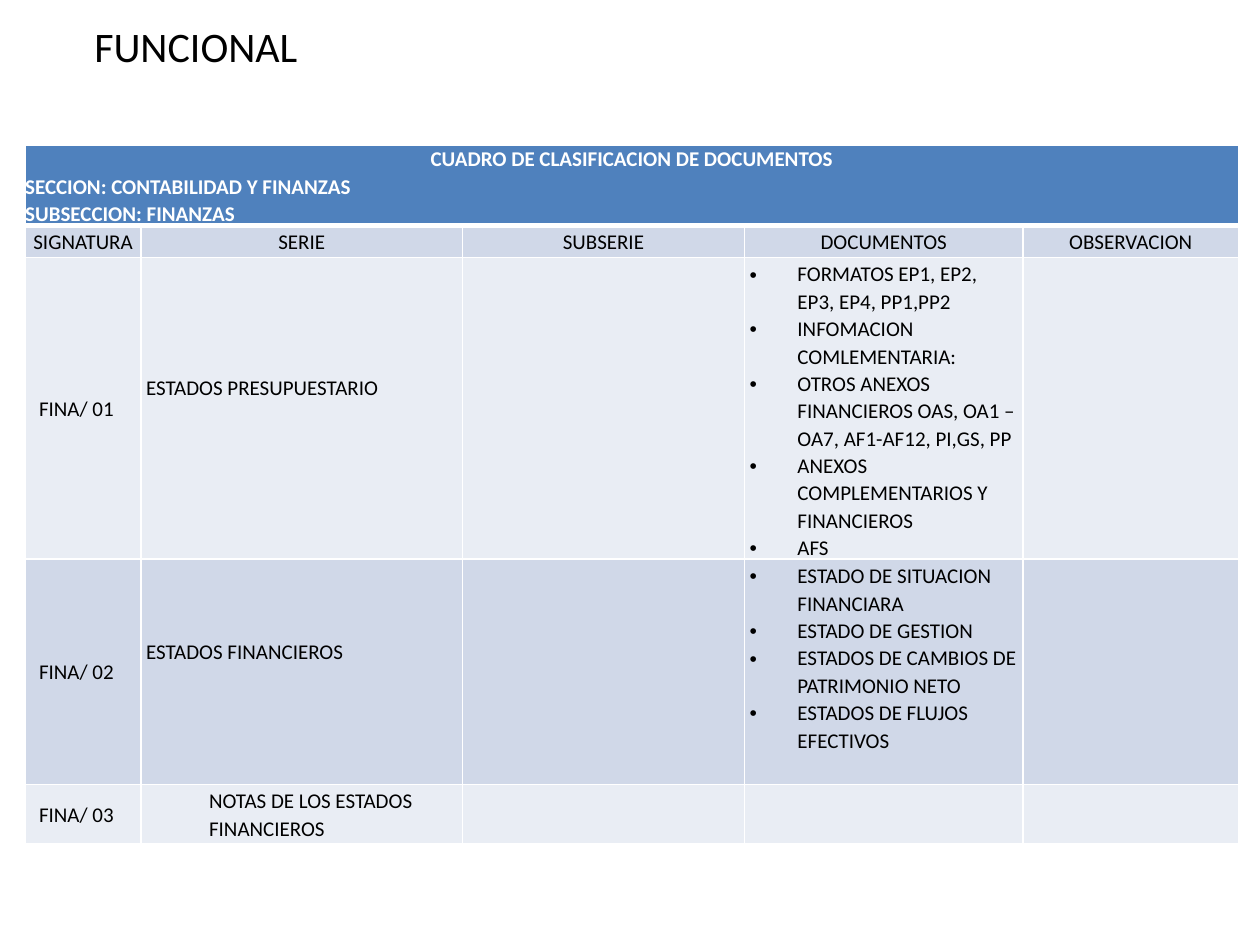
from lxml.etree import SubElement as Sub
from pptx import Presentation
from pptx.dml.color import RGBColor as RGB
from pptx.enum.text import MSO_ANCHOR as Anchor, PP_ALIGN as Align
from pptx.oxml.ns import qn
from pptx.util import Inches, Pt

WHITE = RGB(0xFF, 0xFF, 0xFF)
BLACK = RGB(0, 0, 0)
BLUE = RGB(0x4F, 0x81, 0xBD)
BAND = RGB(0xD0, 0xD8, 0xE8)
PALE = RGB(0xE9, 0xED, 0xF4)

COLS = [0.92, 2.55, 2.24, 2.21, 1.71]
ROWS = [0.54, 0.21, 2.19, 1.79, 0.46]
SIDES = ("lnL", "lnR", "lnT", "lnB")

HEAD = [
    "CUADRO DE CLASIFICACION DE DOCUMENTOS",
    "SECCION: CONTABILIDAD Y FINANZAS",
    "SUBSECCION: FINANZAS",
]
NAMES = ["SIGNATURA", "SERIE", "SUBSERIE", "DOCUMENTOS", "OBSERVACION"]
# Code, series, series format, documents, room below the documents
ITEMS = [
    ("FINA/ 01", "ESTADOS PRESUPUESTARIO", {"foot": 0.35}, [
        "FORMATOS EP1, EP2, EP3, EP4, PP1,PP2",
        "INFOMACION COMLEMENTARIA:",
        "OTROS ANEXOS FINANCIEROS OAS, OA1 –OA7, AF1-AF12, PI,GS, PP",
        "ANEXOS COMPLEMENTARIOS Y FINANCIEROS",
        "AFS",
    ], 0.02),
    ("FINA/ 02", "ESTADOS FINANCIEROS", {"foot": 0.35}, [
        "ESTADO DE SITUACION FINANCIARA",
        "ESTADO DE GESTION",
        "ESTADOS DE CAMBIOS DE PATRIMONIO NETO",
        "ESTADOS DE FLUJOS EFECTIVOS",
    ], 0.24),
    ("FINA/ 03", "NOTAS DE LOS ESTADOS FINANCIEROS", {"left": 0.5}, [], 0.02),
]


def style(font, **form):
    for key, value in {"name": "Calibri", "bold": False, **form}.items():
        if key == "color":
            font.color.rgb = value
        else:
            setattr(font, key, value)


def edge(cell, base=1):
    """White rules on all four sides, the lower one of the given width."""
    props = cell._tc.get_or_add_tcPr()
    for side in SIDES:
        width = base if side == "lnB" else 1
        line = Sub(props, qn(f"a:{side}"), w=str(Pt(width)))
        Sub(Sub(line, qn("a:solidFill")), qn("a:srgbClr"), val=str(WHITE))


def write(cell, lines, align=Align.LEFT, left=0, first=0, dot=False,
          pad=(0.04, 0.02), foot=None, color=BLACK, bold=False):
    side, top = pad
    margins = {"left": side, "right": side, "top": top,
               "bottom": top if foot is None else foot}
    for key, value in margins.items():
        setattr(cell, f"margin_{key}", Inches(value))
    frame = cell.text_frame
    for i, line in enumerate(lines):
        par = frame.add_paragraph() if i else frame.paragraphs[0]
        par.alignment, par.line_spacing = align, 1.07
        props = par._p.get_or_add_pPr()
        props.set("marL", str(Inches(left)))
        props.set("indent", str(Inches(first)))
        if dot:
            Sub(props, qn("a:buFont"), typeface="Arial")
            Sub(props, qn("a:buChar"), char="•")
        run = par.add_run()
        run.text = line
        style(run.font, size=Pt(12), color=color, bold=bold)


def title(slide, box, text):
    frame = slide.shapes.add_textbox(*map(Inches, box)).text_frame
    frame.word_wrap = True
    frame.vertical_anchor = Anchor.MIDDLE
    run = frame.paragraphs[0].add_run()
    run.text = text
    style(run.font, size=Pt(24), color=BLACK)


def chart(slide, left, top):
    """Classification table: banner, column names, one row per item."""
    box = map(Inches, (left, top, sum(COLS), sum(ROWS)))
    table = slide.shapes.add_table(len(ROWS), len(COLS), *box).table
    table.first_row = table.horz_banding = False
    for col, width in zip(table.columns, COLS):
        col.width = Inches(width)
    for r, high in enumerate(ROWS):
        table.rows[r].height = Inches(high)
        for c in range(len(COLS)):
            cell = table.cell(r, c)
            edge(cell, 1 if r else 3)
            cell.fill.solid()
            cell.fill.fore_color.rgb = (BAND if r % 2 else PALE) if r else BLUE
            cell.vertical_anchor = Anchor.MIDDLE if r else Anchor.TOP

    # Banner
    banner = table.cell(0, 0)
    banner.merge(table.cell(0, len(COLS) - 1))
    write(banner, HEAD, pad=(0, 0), color=WHITE, bold=True)
    banner.text_frame.paragraphs[0].alignment = Align.CENTER

    # Column names
    for c, name in enumerate(NAMES):
        pad = (0, 0) if c in (0, len(NAMES) - 1) else (0.04, 0.02)
        write(table.cell(1, c), [name], Align.CENTER, pad=pad)

    # Items
    for r, (code, series, form, docs, foot) in enumerate(ITEMS, 2):
        write(table.cell(r, 0), [code], left=0.01, first=0.1, pad=(0, 0))
        write(table.cell(r, 1), [series], **form)
        write(table.cell(r, 3), docs, left=0.38, first=-0.38, dot=True,
              foot=foot)


def main():
    deck = Presentation()
    deck.slide_width, deck.slide_height = Inches(10), Inches(7.5)
    slide = deck.slides.add_slide(deck.slide_layouts[6])
    title(slide, (0.65, 0.05, 9, 0.63), "FUNCIONAL")
    chart(slide, 0.2, 1.15)
    deck.save("out.pptx")


if __name__ == "__main__":
    main()
